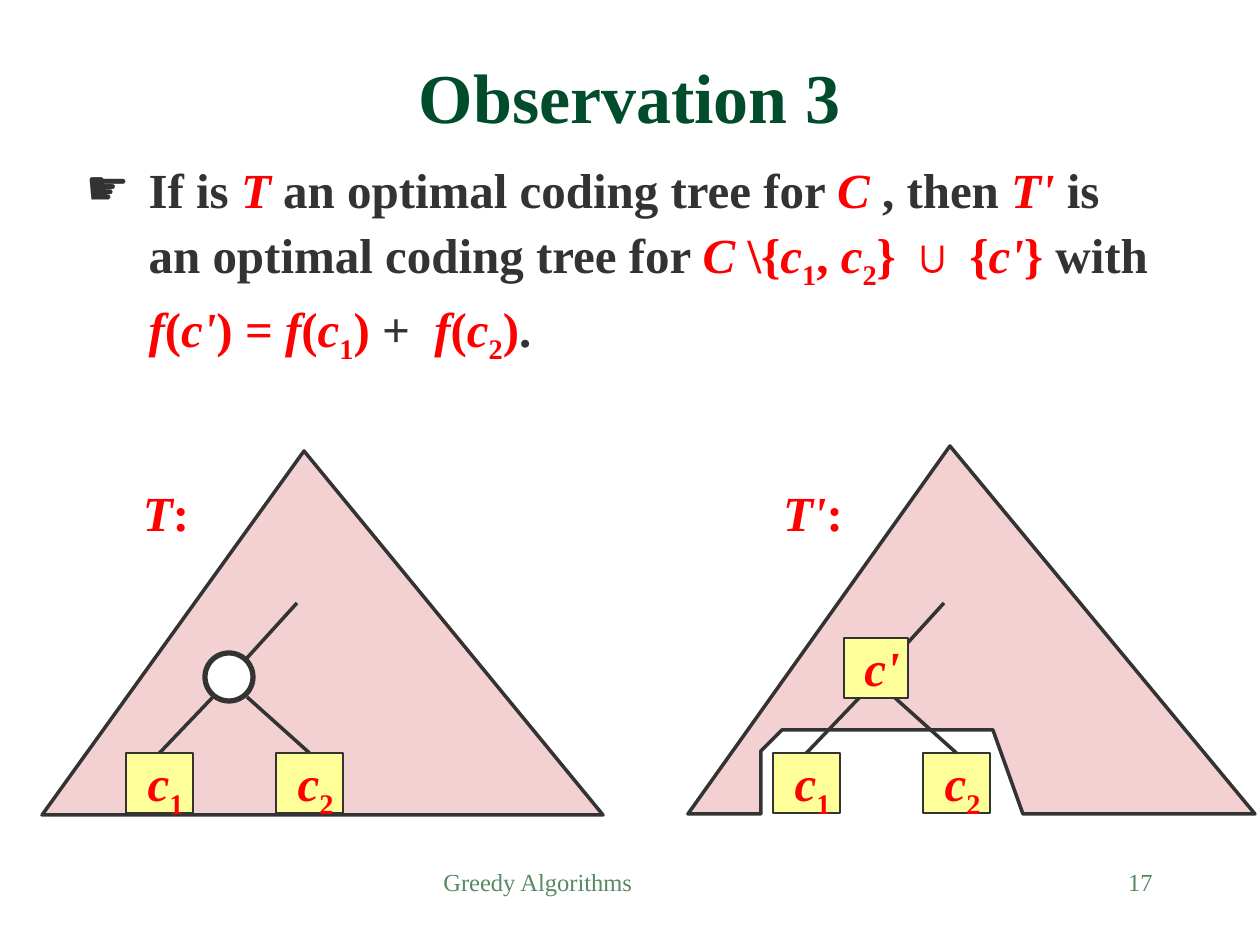
from lxml import etree
from pptx import Presentation
from pptx import util as u
from pptx.dml.color import RGBColor
from pptx.enum import shapes, text
from pptx.oxml import ns

SCALE = 914400 / 126
FONT = "Times New Roman"
GREEN = RGBColor(0x00, 0x4C, 0x2B)
PALE_GREEN = RGBColor(0x57, 0x89, 0x63)
DARK = RGBColor(0x33, 0x33, 0x33)
RED = RGBColor(0xFF, 0x00, 0x00)
PINK = RGBColor(0xF3, 0xD1, 0xD2)
YELLOW = RGBColor(0xFF, 0xFF, 0x99)
WHITE = RGBColor(0xFF, 0xFF, 0xFF)

STYLES = {
    "title": (GREEN, {"size": u.Pt(40), "bold": True}),
    "footer": (PALE_GREEN, {"size": u.Pt(14), "bold": False}),
    "plain": (DARK, {"size": u.Pt(28), "bold": True, "italic": False}),
    "red": (RED, {"size": u.Pt(28), "bold": True, "italic": False}),
    "var": (RED, {"size": u.Pt(28), "bold": True, "italic": True}),
    "sub": (RED, {"size": u.Pt(28), "bold": True, "italic": False}),
}
STATEMENT = [
    ("If is ", "plain"), ("T", "var"), (" an optimal coding tree for ", "plain"),
    ("C ", "var"), (", then ", "plain"), ("T'", "var"),
    (" is an optimal coding tree for ", "plain"), ("C ", "var"), ("\\{", "red"),
    ("c", "var"), ("1", "sub"), (", ", "red"), ("c", "var"), ("2", "sub"),
    ("} ∪ {", "red"), ("c'", "var"), ("}", "red"), (" with ", "plain"),
    ("f", "var"), ("(", "red"), ("c'", "var"), (") = ", "red"),
    ("f", "var"), ("(", "red"), ("c", "var"), ("1", "sub"), (") ", "red"),
    ("+  ", "plain"), ("f", "var"), ("(", "red"), ("c", "var"), ("2", "sub"),
    (")", "red"), (".", "plain"),
]


def px(*lengths):
    return [round(length * SCALE) for length in lengths]


def set_all(target, values):
    for key, value in values.items():
        setattr(target, key, value)


def write(shape, runs, frame_format, paragraph_format):
    frame = shape.text_frame
    set_all(frame, frame_format)
    paragraph = frame.paragraphs[0]
    set_all(paragraph, paragraph_format)
    for words, style in runs:
        color, font_format = STYLES[style]
        run = paragraph.add_run()
        run.text = words
        set_all(run.font, {"name": FONT, **font_format})
        run.font.color.rgb = color
        if style == "sub":
            run.font._element.set("baseline", "-25000")
    return paragraph


def space_before(paragraph, percent):
    properties = paragraph._p.get_or_add_pPr()
    paragraph.space_before = u.Pt(0)
    spacing = properties.find(ns.qn("a:spcBef"))
    spacing.remove(spacing[0])
    etree.SubElement(spacing, ns.qn("a:spcPct"), val=str(percent * 1000))


def paint(shape, fill, width):
    shape.shadow.inherit = False
    shape.fill.solid()
    shape.fill.fore_color.rgb = fill
    shape.line.color.rgb = DARK
    shape.line.width = u.Pt(width)
    return shape


def add_title(slide, box):
    title = slide.shapes.title
    set_all(title, dict(zip(("left", "top", "width", "height"), px(*box))))
    write(title, [("Observation 3", "title")],
          {"vertical_anchor": text.MSO_ANCHOR.MIDDLE, "auto_size": text.MSO_AUTO_SIZE.NONE},
          {"alignment": text.PP_ALIGN.CENTER, "line_spacing": 1.5})


def add_statement(slide, box):
    body = slide.placeholders[1]
    set_all(body, dict(zip(("left", "top", "width", "height"), px(*box))))
    paragraph = write(body, STATEMENT, {"auto_size": text.MSO_AUTO_SIZE.NONE},
                      {"line_spacing": 1.1})
    space_before(paragraph, 35)
    properties = paragraph._p.get_or_add_pPr()
    indent = px(63)[0]
    properties.set("marL", str(indent))
    properties.set("indent", str(-indent))
    etree.SubElement(properties, ns.qn("a:buChar"), char="☛")


def add_footer(slide, box, words, alignment):
    footer = slide.shapes.add_textbox(*px(*box))
    paragraph = write(footer, [(words, "footer")], {"word_wrap": True},
                      {"alignment": alignment})
    space_before(paragraph, 50)


def add_tree_label(slide, box, name):
    label = slide.shapes.add_textbox(*px(*box))
    write(label, [(name, "var"), (":", "red")], {"word_wrap": False},
          {"alignment": text.PP_ALIGN.CENTER})


def add_node(slide, box, runs):
    node = slide.shapes.add_shape(shapes.MSO_SHAPE.RECTANGLE, *px(*box))
    inset = u.Inches(0.06)
    write(paint(node, YELLOW, 0.75), runs,
          {"word_wrap": False, "vertical_anchor": text.MSO_ANCHOR.TOP,
           "margin_left": inset, "margin_right": inset, "margin_top": 0, "margin_bottom": 0},
          {"alignment": text.PP_ALIGN.CENTER})
    return node


def add_branch(slide, start, end, leaf=None):
    branch = slide.shapes.add_connector(shapes.MSO_CONNECTOR.STRAIGHT, *px(*start, *end))
    branch.line.color.rgb = DARK
    branch.line.width = u.Pt(2)
    etree.SubElement(branch._element.spPr, ns.qn("a:effectLst"))
    if leaf is not None:
        branch.end_connect(leaf, 0)


def add_subtree(slide, left, top, merged):
    leaves = [add_node(slide, (left + 150 * i, top + 150, 67, 60),
                       [(" c", "var"), (str(i + 1), "sub")]) for i in range(2)]
    if not merged:
        parent = slide.shapes.add_shape(shapes.MSO_SHAPE.OVAL,
                                        *px(left + 79, top + 50, 48, 48))
        paint(parent, WHITE, 3)
    for leaf, start, end in zip(leaves, (87, 121), (33, 183)):
        add_branch(slide, (left + start, top + 94), (left + end, top + 150), leaf)
    add_branch(slide, (left + 171, top), (left + 121, top + 55))
    if merged:
        add_node(slide, (left + 71, top + 35, 64, 60), [(" c'", "var")])


def add_full_tree(slide, left, top):
    triangle = slide.shapes.add_shape(shapes.MSO_SHAPE.ISOSCELES_TRIANGLE,
                                      *px(left, top, 561, 364))
    triangle.adjustments[0] = 0.467
    paint(triangle, PINK, 2)
    add_subtree(slide, left + 84, top + 152, False)
    add_tree_label(slide, (left + 88, top + 25, 72, 72), "T")


def add_reduced_tree(slide, left, top):
    outline = [(262, 0), (0, 368), (73, 368), (73, 305), (94, 284),
               (305, 284), (335, 368), (567, 368)]
    points = [(left + x, top + y) for x, y in outline]
    builder = slide.shapes.build_freeform(*points[0], scale=SCALE)
    builder.add_line_segments(points[1:], close=True)
    paint(builder.convert_to_shape(), PINK, 2)
    add_subtree(slide, left + 85, top + 157, True)
    add_tree_label(slide, (left + 82, top + 30, 86, 72), "T'")


def main():
    deck = Presentation()
    deck.slide_width, deck.slide_height = px(1260, 945)
    slide = deck.slides.add_slide(deck.slide_layouts[1])
    add_title(slide, (53, 10, 1153, 129))
    add_statement(slide, (73, 147, 1090, 207))
    add_full_tree(slide, 42, 451)
    add_reduced_tree(slide, 688, 446)
    add_footer(slide, (431, 861, 399, 63), "Greedy Algorithms", text.PP_ALIGN.LEFT)
    add_footer(slide, (903, 861, 262, 63), "17", text.PP_ALIGN.RIGHT)
    deck.save("out.pptx")


if __name__ == "__main__":
    main()
